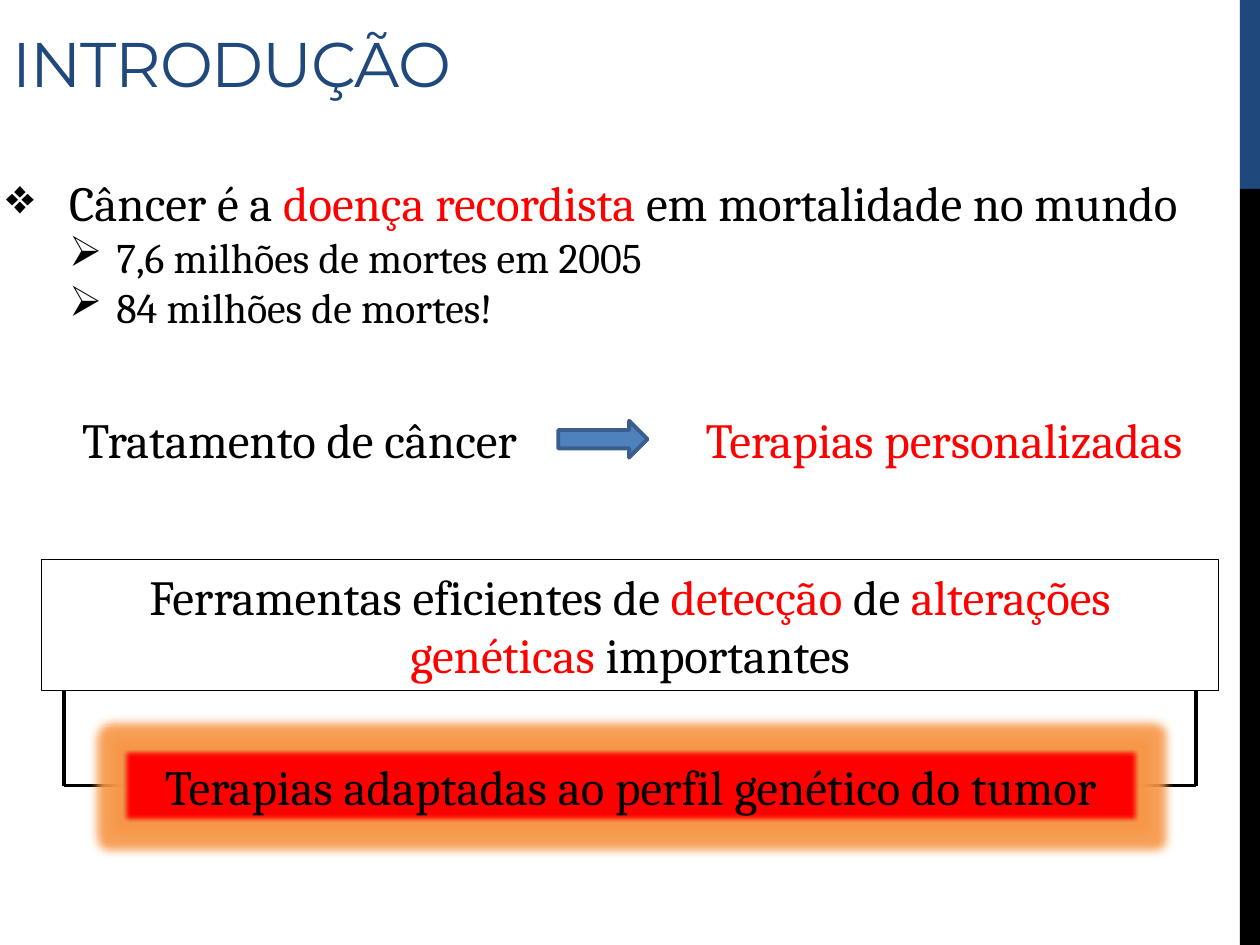
from lxml.etree import SubElement
from pptx import Presentation
from pptx.dml.color import RGBColor
from pptx.enum.shapes import MSO_CONNECTOR, MSO_SHAPE
from pptx.enum.text import MSO_ANCHOR, PP_ALIGN
from pptx.oxml import parse_xml
from pptx.oxml.ns import qn
from pptx.util import Pt

COLORS = {
    "navy": "1F497D", "black": "000000", "red": "FF0000",
    "blue": "4F81BD", "edge": "3A5F8C", "glow": "F79646",
}
COLORS = {name: RGBColor.from_string(value) for name, value in COLORS.items()}

presentation = Presentation()
presentation.slide_width, presentation.slide_height = Pt(720), Pt(540)
slide = presentation.slides.add_slide(presentation.slide_layouts[6])
shapes = slide.shapes


def add_box(kind, left, top, width, height, fill=None, line=None, weight=0.75):
    """Add a preset shape, or a text box when kind is None."""
    place = Pt(left), Pt(top), Pt(width), Pt(height)
    if kind is None:
        shape = shapes.add_textbox(*place)
    else:
        shape = shapes.add_shape(kind, *place)
        shape.shadow.inherit = False
        if fill:
            shape.fill.solid()
            shape.fill.fore_color.rgb = COLORS[fill]
        else:
            shape.fill.background()
        if line:
            shape.line.color.rgb = COLORS[line]
            shape.line.width = Pt(weight)
        else:
            shape.line.fill.background()
    shape.text_frame.word_wrap = True
    return shape


def write(paragraph, runs, size=28, font="Cambria", align=PP_ALIGN.CENTER):
    """Fill a paragraph with (text, colour) runs."""
    paragraph.alignment = align
    paragraph.font.size = Pt(size)
    paragraph.font.name = font
    for text, color in runs:
        run = paragraph.add_run()
        run.text = text
        run.font.color.rgb = COLORS[color]


# Side band
add_box(MSO_SHAPE.RECTANGLE, 708.5, 0, 11.5, 108, "navy")
add_box(MSO_SHAPE.RECTANGLE, 708.5, 108, 11.5, 432, "black")

# Title
title = add_box(None, 0, 8, 705.6, 52.5)
title.text_frame.vertical_anchor = MSO_ANCHOR.BOTTOM
write(title.text_frame.paragraphs[0], [("INTRODUÇÃO", "navy")], 36, "Montserrat", PP_ALIGN.LEFT)
title.text_frame.paragraphs[0].runs[0].font._element.set("spc", "-60")

# Treatment leads to personalised therapies
add_box(MSO_SHAPE.RIGHT_ARROW, 319, 240.5, 51, 21, "blue", "edge", 2.25)
for text, color, left, width in [
    ("Terapias personalizadas", "red", 381.6, 315.4),
    ("Tratamento de câncer", "black", 23.8, 294.5),
]:
    label = add_box(None, left, 230.4, width, 41)
    write(label.text_frame.paragraphs[0], [(text, color)])

# Tools box
tools = add_box(MSO_SHAPE.RECTANGLE, 23.8, 319.7, 672.4, 74.9, line="black")
write(tools.text_frame.paragraphs[0], [
    ("Ferramentas eficientes de ", "black"), ("detecção", "red"), (" de ", "black"),
    ("alterações genéticas", "red"), (" importantes", "black"),
])

# Glowing therapies box
therapies = add_box(MSO_SHAPE.RECTANGLE, 70.5, 428.4, 579.5, 41, "red", "edge")
write(therapies.text_frame.paragraphs[0],
      [("Terapias adaptadas ao perfil genético do tumor", "black")])
effects = therapies._element.spPr.find(qn("a:effectLst"))
effects.append(parse_xml(
    '<a:glow xmlns:a="http://schemas.openxmlformats.org/drawingml/2006/main" rad="139700">'
    f'<a:srgbClr val="{COLORS["glow"]}"><a:alpha val="90000"/></a:srgbClr></a:glow>'))
SubElement(effects, qn("a:softEdge"), rad="31750")

# Brackets from the tools box to the sides of the therapies box
middle = 448.9
for x, side, site in [(36.7, 70.5, 1), (683.3, 650, 3)]:
    drop = shapes.add_connector(MSO_CONNECTOR.STRAIGHT, Pt(x), Pt(394.6), Pt(x), Pt(middle))
    reach = shapes.add_connector(MSO_CONNECTOR.STRAIGHT, Pt(x), Pt(middle), Pt(side), Pt(middle))
    reach.end_connect(therapies, site)
    for connector in (drop, reach):
        connector.line.color.rgb = COLORS["black"]
        connector.line.width = Pt(2)
        SubElement(connector._element.spPr, qn("a:effectLst"))
shapes._spTree.append(therapies._element)  # the glow lies over the brackets

# Bulleted facts
facts = add_box(None, -3.6, 95, 722, 99.4).text_frame
for index, (bullet, level, margin, indent, size, runs) in enumerate([
    ("❖", 0, 36, 36, 28, [("Câncer é a ", "black"), ("doença recordista ", "red"),
                          ("em mortalidade no mundo", "black")]),
    ("➢", 1, 63, 27, 24, [("7,6 milhões de mortes em 2005", "black")]),
    ("➢", 1, 63, 27, 24, [("84 milhões de mortes!", "black")]),
]):
    paragraph = facts.add_paragraph() if index else facts.paragraphs[0]
    paragraph.level = level
    properties = paragraph._p.get_or_add_pPr()
    properties.set("marL", str(Pt(margin)))
    properties.set("indent", str(-Pt(indent)))
    SubElement(properties, qn("a:buChar"), char=bullet)
    write(paragraph, runs, size, align=PP_ALIGN.LEFT)

presentation.save("out.pptx")
